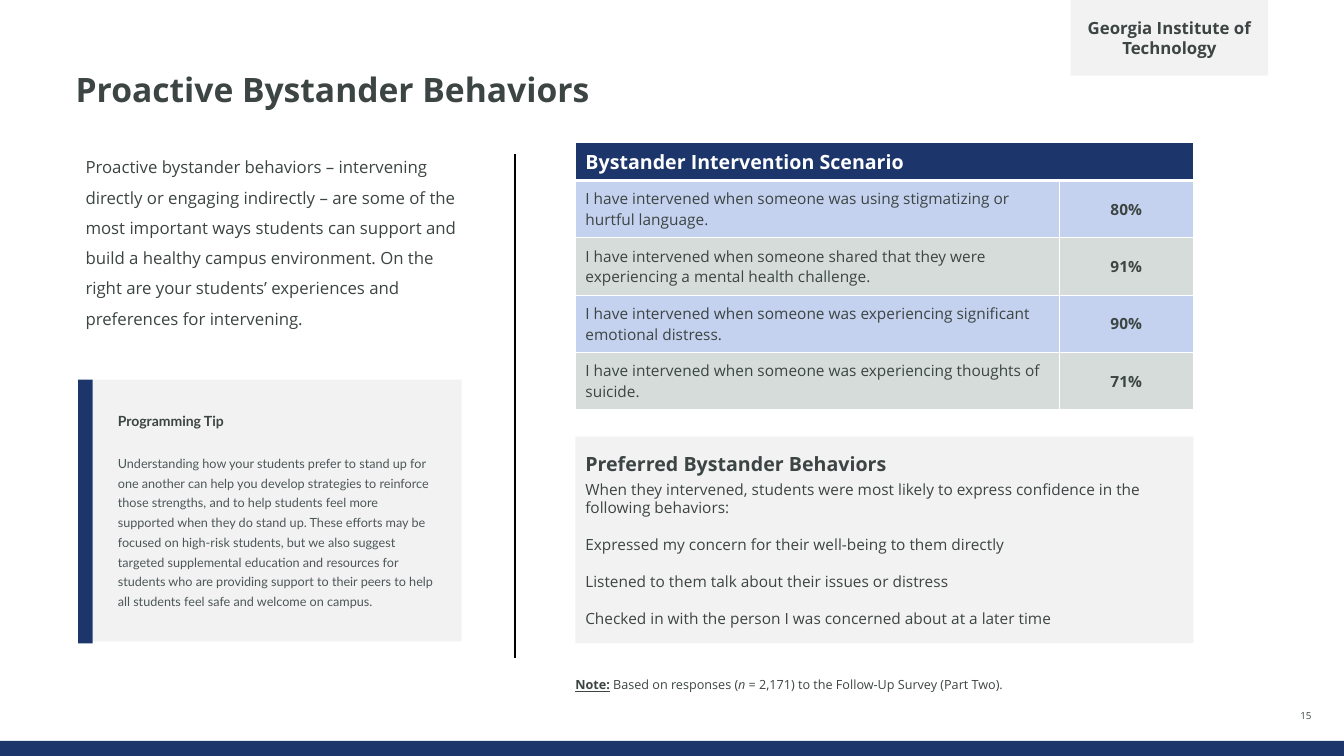
from lxml.etree import SubElement
from pptx import Presentation
from pptx.dml.color import RGBColor
from pptx.enum.shapes import MSO_CONNECTOR, MSO_SHAPE
from pptx.enum.text import MSO_ANCHOR, MSO_AUTO_SIZE, PP_ALIGN
from pptx.oxml.ns import qn
from pptx.util import Pt

NAVY, INK, SLATE, PALE, WHITE = "1C366B", "3C4543", "4C5758", "F2F2F2", "FFFFFF"
ROW_FILLS = ("C4D2EF", "D6DCDA")

INTRO = (
    "Proactive bystander behaviors – intervening directly or engaging indirectly – are some "
    "of the most important ways students can support and build a healthy campus environment. "
    "On the right are your students’ experiences and preferences for intervening."
)
TIP = (
    "Understanding how your students prefer to stand up for one another can help you develop "
    "strategies to reinforce those strengths, and to help students feel more supported when "
    "they do stand up. These efforts may be focused on high-risk students, but we also suggest "
    "targeted supplemental education and resources for students who are providing support to "
    "their peers to help all students feel safe and welcome on campus."
)
SCENARIOS = (
    ("I have intervened when someone was using stigmatizing or hurtful language.", "80%"),
    ("I have intervened when someone shared that they were experiencing a mental health "
     "challenge.", "91%"),
    ("I have intervened when someone was experiencing significant emotional distress.", "90%"),
    ("I have intervened when someone was experiencing thoughts of suicide.", "71%"),
)
LEAD_IN = (
    "When they intervened, students were most likely to express confidence in the "
    "following behaviors:"
)
BEHAVIORS = (
    "Expressed my concern for their well-being to them directly",
    "Listened to them talk about their issues or distress",
    "Checked in with the person I was concerned about at a later time",
)


def color(hex_value):
    return RGBColor.from_string(hex_value)


def set_frame(frame, insets=(7.2, 3.6, 7.2, 3.6), anchor=MSO_ANCHOR.TOP):
    frame.word_wrap = True
    frame.auto_size = MSO_AUTO_SIZE.NONE
    frame.vertical_anchor = anchor
    frame.margin_left, frame.margin_top, frame.margin_right, frame.margin_bottom = map(Pt, insets)
    return frame


def next_paragraph(frame, spacing=None, before=0, after=0, align=PP_ALIGN.LEFT):
    """Return the frame's empty first paragraph, or a new one after its text."""
    first = frame.paragraphs[0]
    paragraph = frame.add_paragraph() if first.runs else first
    paragraph.alignment = align
    paragraph.space_before, paragraph.space_after = Pt(before), Pt(after)
    if spacing:
        paragraph.line_spacing = spacing
    return paragraph


def add_run(paragraph, text, size, bold=False, ink=INK, face="Open Sans"):
    run = paragraph.add_run()
    run.text = text
    run.font.size, run.font.bold, run.font.name = Pt(size), bold, face
    run.font.color.rgb = color(ink)
    return run


def add_panel(slide, box, fill):
    panel = slide.shapes.add_shape(MSO_SHAPE.RECTANGLE, *map(Pt, box))
    panel.shadow.inherit = False
    panel.fill.solid()
    panel.fill.fore_color.rgb = color(fill)
    panel.line.fill.background()
    return panel


def add_text_box(slide, box):
    return slide.shapes.add_textbox(*map(Pt, box)).text_frame


def add_title(slide, box):
    title = slide.shapes.title
    title.left, title.top, title.width, title.height = map(Pt, box)
    frame = set_frame(title.text_frame, (0, 0, 0, 0))
    add_run(next_paragraph(frame, Pt(27)), "Proactive Bystander Behaviors", 24, True)


def add_school_tag(slide, box):
    frame = set_frame(add_panel(slide, box, PALE).text_frame, (7.2, 0, 7.2, 0), MSO_ANCHOR.MIDDLE)
    paragraph = next_paragraph(frame, Pt(14.4), align=PP_ALIGN.CENTER)
    add_run(paragraph, "Georgia Institute of Technology", 12, True)


def add_intro(slide, box):
    frame = set_frame(add_text_box(slide, box))
    add_run(next_paragraph(frame, Pt(21.6), after=2), INTRO, 12)


def add_divider(slide, x, top, bottom):
    divider = slide.shapes.add_connector(MSO_CONNECTOR.STRAIGHT, Pt(x), Pt(top), Pt(x), Pt(bottom))
    divider.line.color.rgb = color("000000")
    divider.line.width = Pt(1)
    SubElement(divider._element.spPr, qn("a:effectLst"))


def add_tip(slide, box):
    left, top, width, height = box
    bar = 10.4
    panel = add_panel(slide, (left + bar, top, width - bar, height - 1.4), PALE)
    frame = set_frame(panel.text_frame, (18, 0, 18, 0), MSO_ANCHOR.MIDDLE)
    heading = next_paragraph(frame, Pt(12), after=2)
    add_run(heading, "Programming Tip", 10, True, face="Lato")
    advice = next_paragraph(frame, 1.3, before=14, after=2)
    add_run(advice, TIP, 9, ink=SLATE, face="Lato")
    add_panel(slide, (left, top, bar, height), NAVY)


def style_cell(cell, fill, bottom=1):
    """Draw white borders, then fill; the schema wants borders first."""
    properties = cell._tc.get_or_add_tcPr()
    for side, width in (("L", 1), ("R", 1), ("T", 1), ("B", bottom)):
        border = SubElement(properties, qn(f"a:ln{side}"), w=str(Pt(width)))
        SubElement(SubElement(border, qn("a:solidFill")), qn("a:srgbClr"), val=WHITE)
    cell.fill.solid()
    cell.fill.fore_color.rgb = color(fill)
    cell.vertical_anchor = MSO_ANCHOR.MIDDLE


def add_scenarios(slide, box):
    left, top, width, height = box
    header_height, share_width = 27.2, 95.8
    graphic = slide.shapes.add_table(len(SCENARIOS) + 1, 2, *map(Pt, box))
    table = graphic.table
    table.first_row = table.horz_banding = False
    table.columns[0].width, table.columns[1].width = Pt(width - share_width), Pt(share_width)
    for row in table.rows:
        row.height = Pt((height - header_height) / len(SCENARIOS))
    table.rows[0].height = Pt(header_height)

    header = table.cell(0, 0)
    header.merge(table.cell(0, 1))
    for column in range(2):
        style_cell(table.cell(0, column), NAVY, bottom=3)
    header.margin_top = header.margin_bottom = 0
    heading = next_paragraph(header.text_frame)
    add_run(heading, "Bystander Intervention Scenario", 14, True, WHITE)

    for index, (scenario, share) in enumerate(SCENARIOS):
        scenario_cell, share_cell = table.rows[index + 1].cells
        for cell in (scenario_cell, share_cell):
            style_cell(cell, ROW_FILLS[index % 2])
        add_run(next_paragraph(scenario_cell.text_frame), scenario, 11)
        add_run(next_paragraph(share_cell.text_frame, align=PP_ALIGN.CENTER), share, 11, True)


def add_behaviors(slide, box):
    frame = set_frame(add_panel(slide, box, PALE).text_frame, anchor=MSO_ANCHOR.MIDDLE)
    heading = next_paragraph(frame, Pt(16.8), after=3)
    add_run(heading, "Preferred Bystander Behaviors", 14, True)
    add_run(next_paragraph(frame, Pt(13.2)), LEAD_IN, 11)
    for behavior in BEHAVIORS:
        add_run(next_paragraph(frame, Pt(13.2), before=13.2), behavior, 11)


def add_note(slide, box):
    frame = set_frame(add_text_box(slide, box), (0, 0, 0, 0), MSO_ANCHOR.BOTTOM)
    note = next_paragraph(frame, Pt(12), after=2)
    add_run(note, "Note:", 9, True).font.underline = True
    add_run(note, " Based on responses (", 9)
    add_run(note, "n", 9).font.italic = True
    add_run(note, " = 2,171) to the Follow-Up Survey (Part Two).", 9)


def add_page_number(slide, box):
    frame = set_frame(add_text_box(slide, box), (0, 0, 0, 0), MSO_ANCHOR.BOTTOM)
    add_run(next_paragraph(frame, Pt(8.4), align=PP_ALIGN.CENTER), "15", 7)


def main():
    deck = Presentation()
    deck.slide_width, deck.slide_height = Pt(960), Pt(540)
    slide = deck.slides.add_slide(deck.slide_layouts[5])
    right, right_width = 411, 441.4

    add_panel(slide, (0, 529.2, 960, 10.8), NAVY)
    add_title(slide, (54, 51, 852, 50))
    add_school_tag(slide, (764.8, 0, 141, 54))
    add_intro(slide, (54, 101.5, 291.6, 136))
    add_divider(slide, 368, 110, 470)
    add_tip(slide, (55.8, 271.2, 274, 188.4))
    add_scenarios(slide, (right, 101.7, right_width, 191.2))
    add_behaviors(slide, (right, 311.8, right_width, 147.6))
    add_note(slide, (right, 483.8, 432.7, 10.8))
    add_page_number(slide, (914.4, 504.7, 36.7, 10.8))
    deck.save("out.pptx")


if __name__ == "__main__":
    main()
